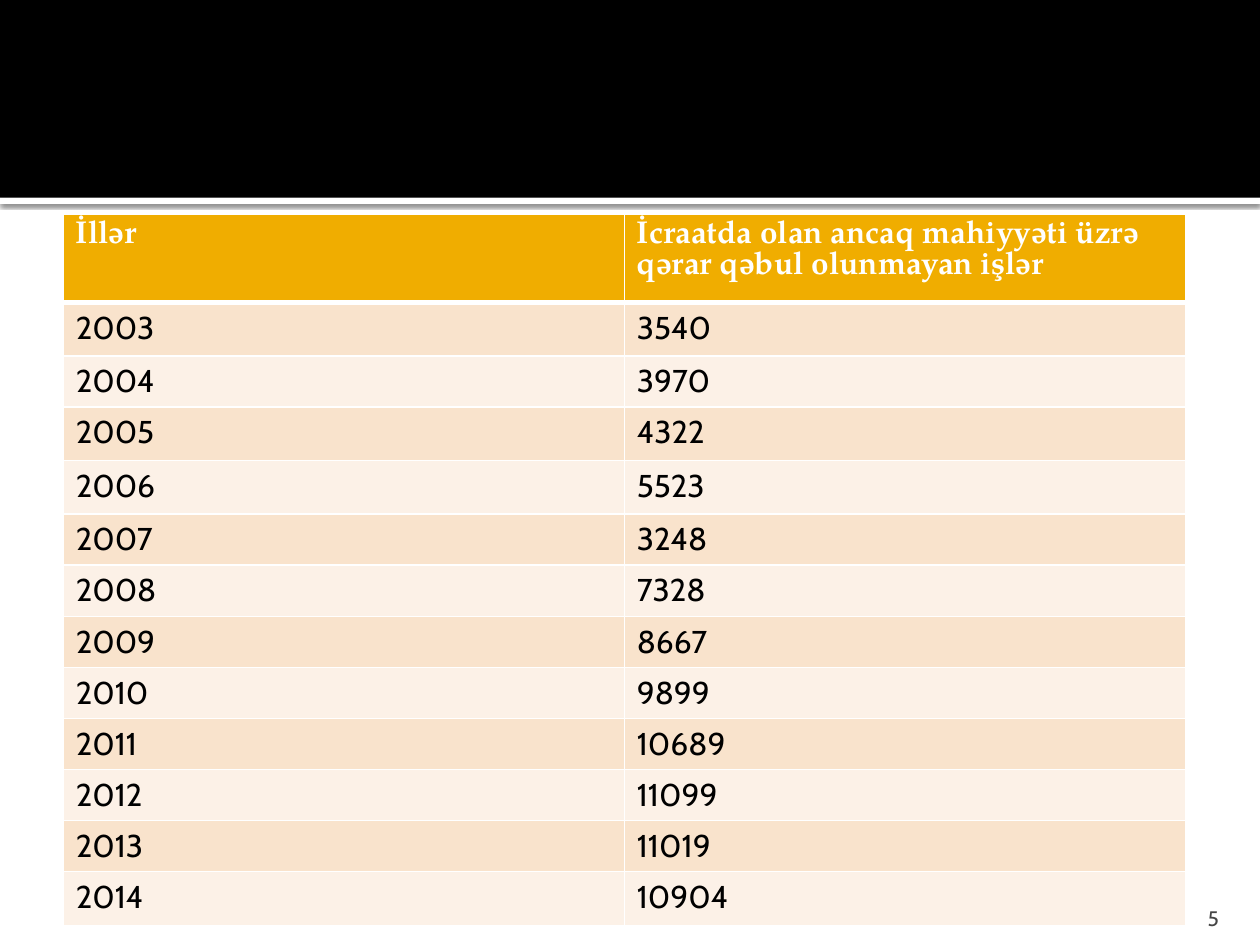
from lxml import etree
from pptx import Presentation
from pptx.dml.color import RGBColor
from pptx.enum.shapes import MSO_SHAPE
from pptx.enum.text import MSO_ANCHOR, PP_ALIGN
from pptx.oxml.ns import qn
from pptx.util import Pt

RECTANGLE = MSO_SHAPE.RECTANGLE
BOTTOM = MSO_ANCHOR.BOTTOM
RIGHT = PP_ALIGN.RIGHT

HEADING_FONT, BODY_FONT = "TeX Gyre Pagella", "Cabin"
WHITE, BLACK, GOLD, GREY = "FFFFFF", "000000", "F0AD00", "454545"
BANDS = ["F9E3CC", "FCF1E7"]

HEADINGS = ["İllər", "İcraatda olan ancaq mahiyyəti üzrə qərar qəbul olunmayan işlər"]
FIRST_YEAR = 2003
CASES = [3540, 3970, 4322, 5523, 3248, 7328, 8667, 9899, 10689, 11099, 11019, 10904]
TALL_YEARS = {2003, 2005, 2006, 2014}
HEADER_HEIGHT, ROW_HEIGHT, TALL_ROW_HEIGHT = 50.4, 29.2, 30.6


def color(hex_value):
    return RGBColor.from_string(hex_value)


def style_text(paragraph, font_name, size, hex_value, bold=False):
    font = paragraph.font
    font.name, font.size, font.bold = font_name, Pt(size), bold
    font.color.rgb = color(hex_value)


def add_bar(slide, box, hex_value):
    bar = slide.shapes.add_shape(RECTANGLE, *(Pt(v) for v in box))
    bar.fill.solid()
    bar.fill.fore_color.rgb = color(hex_value)
    bar.line.fill.background()
    bar.shadow.inherit = False
    return bar


def add_shadow(bar, blur, distance):
    effects = bar._element.spPr.find(qn("a:effectLst"))
    shadow = etree.SubElement(effects, qn("a:outerShdw"), blurRad=str(Pt(blur)),
                              dist=str(Pt(distance)), dir="5400000",
                              algn="tl", rotWithShape="0")
    tint = etree.SubElement(shadow, qn("a:srgbClr"), val=BLACK)
    etree.SubElement(tint, qn("a:alpha"), val="60000")


def set_borders(cell, widths):
    properties = cell._tc.get_or_add_tcPr()
    for index, (side, width) in enumerate(widths.items()):
        line = etree.Element(qn(f"a:ln{side}"), w=str(Pt(width)))
        fill = etree.SubElement(line, qn("a:solidFill"))
        etree.SubElement(fill, qn("a:srgbClr"), val=WHITE)
        properties.insert(index, line)


def add_header_band(slide, box):
    left, top, width, height = box
    strip_height = 3.6
    strip = add_bar(slide, (left, top + height, width, strip_height), WHITE)
    add_shadow(strip, blur=2.5, distance=0.8)
    add_bar(slide, box, BLACK)


def add_case_table(slide, box):
    rows = [HEADINGS] + [[FIRST_YEAR + i, count] for i, count in enumerate(CASES)]
    frame = slide.shapes.add_table(len(rows), len(HEADINGS), *(Pt(v) for v in box))
    table = frame.table
    for column in table.columns:
        column.width = Pt(box[2] / len(HEADINGS))

    for r, values in enumerate(rows):
        is_header = r == 0
        if is_header:
            height = HEADER_HEIGHT
        else:
            height = TALL_ROW_HEIGHT if values[0] in TALL_YEARS else ROW_HEIGHT
        table.rows[r].height = Pt(height)
        for c, value in enumerate(values):
            cell = table.cell(r, c)
            cell.text = str(value)
            cell.fill.solid()
            cell.fill.fore_color.rgb = color(GOLD if is_header else BANDS[(r - 1) % 2])
            # The rule under the headings is thicker than the rest
            set_borders(cell, {"L": 1, "R": 1, "T": 3 if r == 1 else 1,
                               "B": 3 if is_header else 1})
            paragraph = cell.text_frame.paragraphs[0]
            if is_header:
                style_text(paragraph, HEADING_FONT, 18, WHITE, bold=True)
            else:
                style_text(paragraph, BODY_FONT, 18, BLACK)


def add_page_number(slide, box, number):
    text_frame = slide.shapes.add_textbox(*(Pt(v) for v in box)).text_frame
    text_frame.word_wrap = True
    text_frame.vertical_anchor = BOTTOM
    text_frame.margin_bottom = 0
    paragraph = text_frame.paragraphs[0]
    paragraph.text = number
    paragraph.alignment = RIGHT
    style_text(paragraph, BODY_FONT, 12, GREY)


def main():
    presentation = Presentation()
    presentation.slide_width, presentation.slide_height = Pt(720), Pt(540)
    slide = presentation.slides.add_slide(presentation.slide_layouts[6])

    add_header_band(slide, (0, 0, 720, 113))
    add_case_table(slide, (36.1, 122.4, 641.2, 403))
    add_page_number(slide, (646, 510, 57.6, 21.6), "5")

    presentation.save("out.pptx")


if __name__ == "__main__":
    main()
